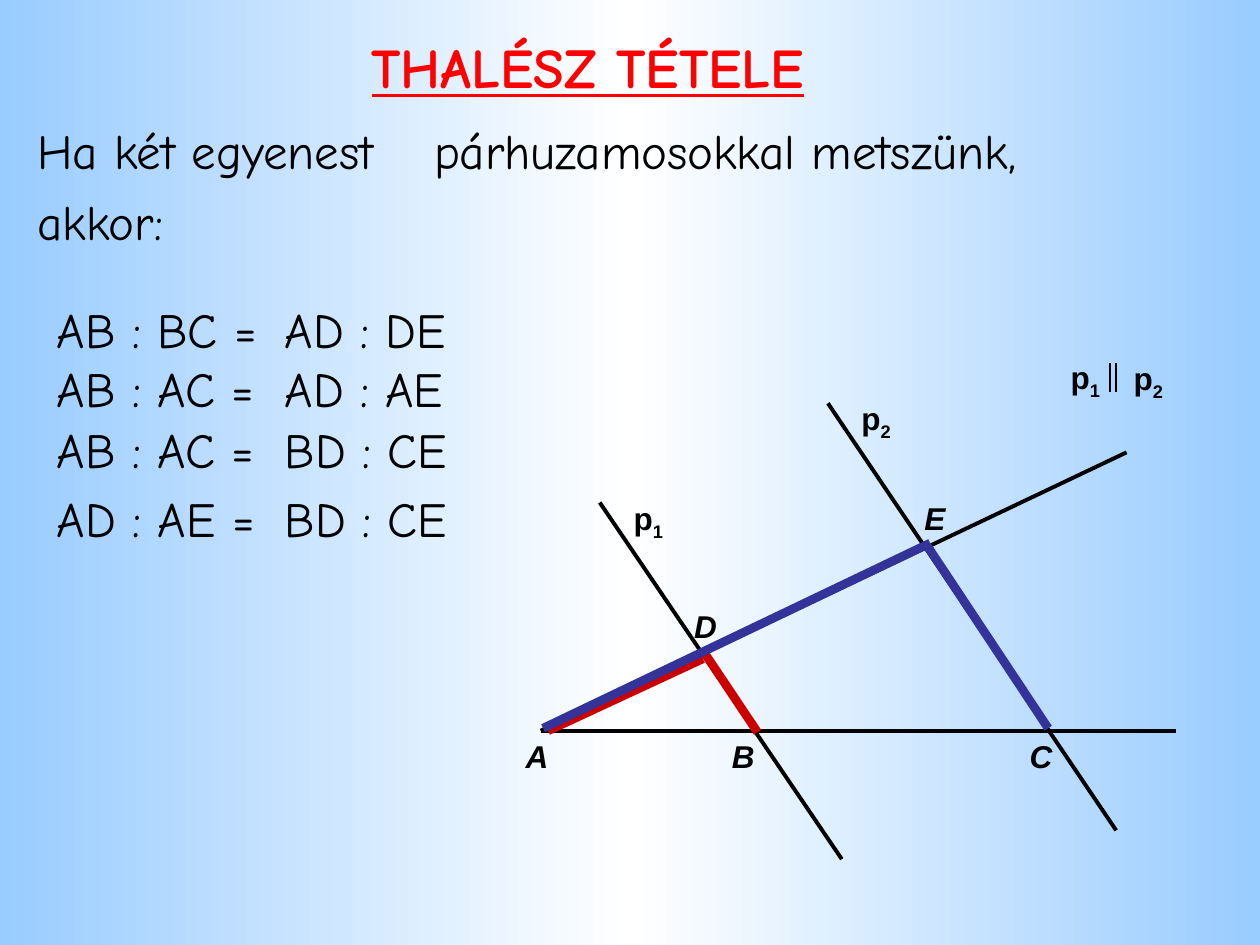
from typing import NamedTuple

import pptx
import pptx.dml.color
import pptx.enum.shapes
import pptx.enum.text
import pptx.oxml
import pptx.oxml.ns
import pptx.shapes.autoshape
import pptx.util
from pptx.dml.color import RGBColor
from pptx.util import Cm

BLACK = RGBColor(0, 0, 0)
WHITE = RGBColor(255, 255, 255)
TITLE_RED = RGBColor(255, 0, 0)
SMALL_RED = RGBColor(0xCC, 0, 0)
LARGE_BLUE = RGBColor(0x33, 0x33, 0x99)
SKY = RGBColor(0x99, 0xCC, 0xFF)

LABEL_HEIGHT = 1.02
ROW_HEIGHT = 1.6


class Statement(NamedTuple):
    text: str
    left: float
    top: float
    width: float
    height: float = ROW_HEIGHT


class Label(NamedTuple):
    text: str
    left: float
    top: float
    subscript: str = ""


class Segment(NamedTuple):
    start: tuple[float, float]
    end: tuple[float, float]
    color: RGBColor = BLACK
    weight: float = 2.25


class Proportion(NamedTuple):
    left_side: str
    right_side: str
    top: float


STATEMENTS = [
    Statement("akkor:", 0.5, 3.73, 7.2, 1.8),
    Statement("párhuzamosokkal metszünk,", 8.5, 2.31, 16),
    Statement("Ha két egyenest", 0.5, 2.31, 8.8, 1.8),
]

PROPORTIONS = [
    Proportion("AB : BC =", "AD : DE", 5.92),
    Proportion("AB : AC =", "AD : AE", 7.11),
    Proportion("AB : AC =", "BD : CE", 8.33),
    Proportion("AD : AE =", "BD : CE", 9.73),
]

POINT_A = (10.9, 14.73)
SEGMENTS = [
    # Arms of the angle
    Segment(POINT_A, (23.7, 14.73)),
    Segment(POINT_A, (22.71, 9.12)),
    # Parallels p1 and p2
    Segment((12.09, 10.13), (16.97, 17.32)),
    Segment((16.69, 8.13), (22.5, 16.74)),
    # Sides AD and BD of the small triangle
    Segment((11.05, 14.73), (14.17, 13.28), SMALL_RED, 5),
    Segment((15.27, 14.76), (14.2, 13.16), SMALL_RED, 5),
    # Sides AE and CE of the large triangle
    Segment((10.95, 14.68), (18.75, 10.95), LARGE_BLUE, 5),
    Segment((21.13, 14.68), (18.69, 11), LARGE_BLUE, 5),
]

LABELS = [
    Label("p", 12.5, 9.93, "1"),
    Label("p", 17.09, 7.92, "2"),
    Label("D", 13.74, 12.12),
    Label("E", 18.36, 9.93),
    Label("A", 10.34, 14.73),
    Label("B", 14.5, 14.73),
    Label("C", 20.5, 14.73),
]

PARALLEL_LABELS = [Label("p", 21.31, 7.09, "1"), Label("p", 22.58, 7.11, "2")]
PARALLEL_BARS = [Segment((x, 7.32), (x, 7.9), weight=1) for x in (22.38, 22.5)]


def paint_background(slide) -> None:
    fill = slide.background.fill
    fill.gradient()
    fill.gradient_angle = 0
    stops = fill._fill._gradFill.gsLst
    for stop in list(stops):
        stops.remove(stop)
    for position, color in ((0, SKY), (50, WHITE), (100, SKY)):
        stops.append(pptx.oxml.parse_xml(
            f'<a:gs {pptx.oxml.ns.nsdecls("a")} pos="{position * 1000}">'
            f'<a:srgbClr val="{color}"/></a:gs>'))


def add_statement(shapes, statement: Statement) -> pptx.shapes.autoshape.Shape:
    shape = shapes.add_textbox(Cm(statement.left), Cm(statement.top),
                               Cm(statement.width), Cm(statement.height))
    shape.text_frame.word_wrap = True
    paragraph = shape.text_frame.paragraphs[0]
    paragraph.text = statement.text
    paragraph.font.name = "Comic Neue"
    paragraph.font.size = pptx.util.Pt(28)
    paragraph.font.color.rgb = BLACK
    # Hanging indent and space before of 20 %
    properties = paragraph._p.get_or_add_pPr()
    properties.set("marL", str(Cm(0.95)))
    properties.set("indent", str(Cm(-0.95)))
    properties.insert(0, pptx.oxml.parse_xml(
        f'<a:spcBef {pptx.oxml.ns.nsdecls("a")}><a:spcPct val="20000"/></a:spcBef>'))
    return shape


def add_label(shapes, label: Label) -> None:
    width = 1.14 if label.subscript else 0.97
    shape = shapes.add_textbox(Cm(label.left), Cm(label.top),
                               Cm(width), Cm(LABEL_HEIGHT))
    frame = shape.text_frame
    frame.word_wrap = False
    frame.auto_size = pptx.enum.text.MSO_AUTO_SIZE.SHAPE_TO_FIT_TEXT
    paragraph = frame.paragraphs[0]
    paragraph.alignment = pptx.enum.text.PP_ALIGN.CENTER
    paragraph.font.name = "Arial"
    paragraph.font.size = pptx.util.Pt(18)
    paragraph.font.bold = True
    paragraph.font.italic = not label.subscript
    paragraph.font.color.rgb = BLACK
    paragraph.add_run().text = label.text
    if label.subscript:
        run = paragraph.add_run()
        run.text = label.subscript
        run._r.get_or_add_rPr().set("baseline", "-25000")


def add_segment(shapes, segment: Segment) -> None:
    connector = shapes.add_connector(
        pptx.enum.shapes.MSO_CONNECTOR.STRAIGHT,
        *(Cm(value) for value in segment.start + segment.end))
    connector.line.color.rgb = segment.color
    connector.line.width = pptx.util.Pt(segment.weight)
    connector._element.spPr.append(pptx.oxml.parse_xml(
        f'<a:effectLst {pptx.oxml.ns.nsdecls("a")}/>'))


def main() -> None:
    presentation = pptx.Presentation()
    presentation.slide_width = Cm(25.4)
    presentation.slide_height = Cm(19.05)
    slide = presentation.slides.add_slide(presentation.slide_layouts[6])
    paint_background(slide)

    # Title
    title = add_statement(slide.shapes, Statement("THALÉSZ TÉTELE", 5, 0.53, 13.7))
    heading = title.text_frame.paragraphs[0]
    heading.alignment = pptx.enum.text.PP_ALIGN.CENTER
    heading.font.size = pptx.util.Pt(32)
    heading.font.bold = True
    heading.font.underline = True
    heading.font.color.rgb = TITLE_RED

    # Theorem and its proportions
    for statement in STATEMENTS:
        add_statement(slide.shapes, statement)
    for proportion in PROPORTIONS:
        add_statement(slide.shapes,
                      Statement(proportion.left_side, 0.9, proportion.top, 6))
        add_statement(slide.shapes,
                      Statement(proportion.right_side, 5.49, proportion.top, 4.4))

    # Figure
    for segment in SEGMENTS:
        add_segment(slide.shapes, segment)
    for label in LABELS:
        add_label(slide.shapes, label)

    # Note that p1 and p2 are parallel
    group = slide.shapes.add_group_shape()
    for label in PARALLEL_LABELS:
        add_label(group.shapes, label)
    for bar in PARALLEL_BARS:
        add_segment(group.shapes, bar)

    presentation.save("out.pptx")


if __name__ == "__main__":
    main()
